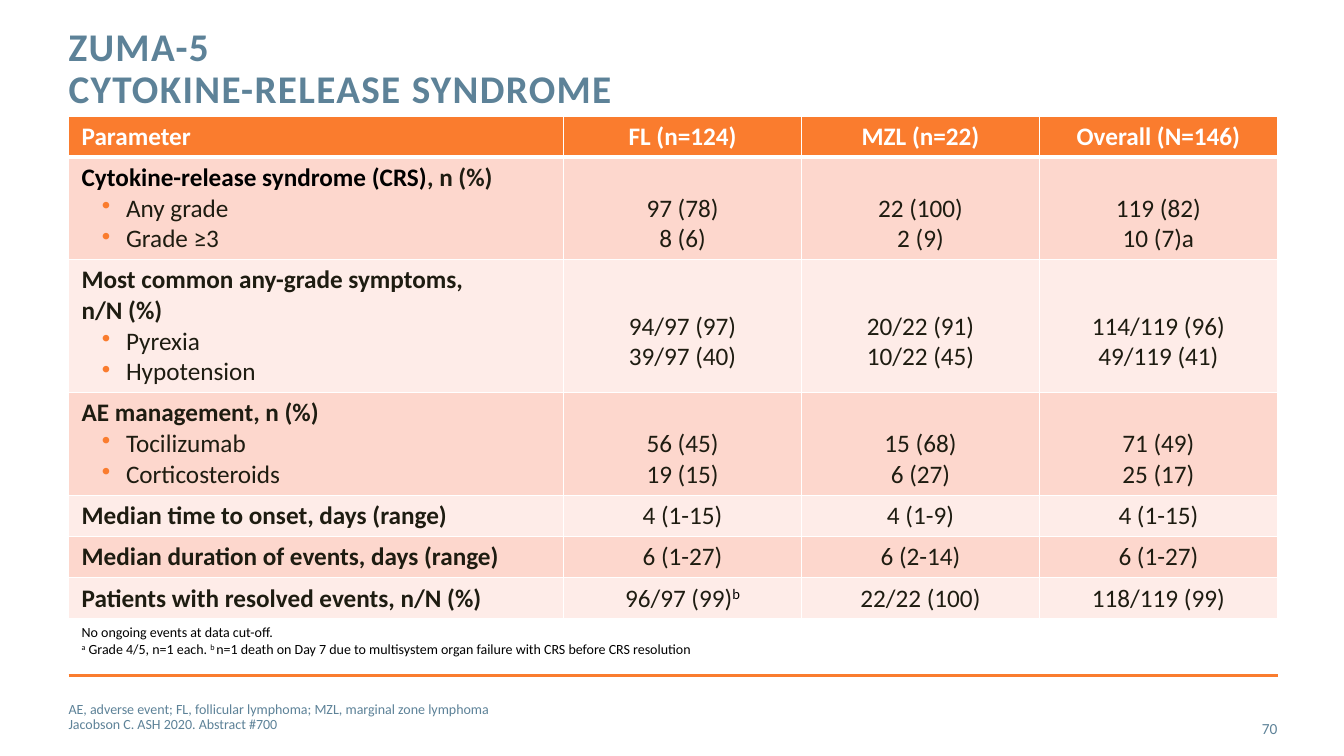
from dataclasses import dataclass

from lxml import etree
from pptx import Presentation
from pptx import util as u
from pptx.dml.color import RGBColor
from pptx.enum import shapes, text
from pptx.oxml import ns

ORANGE, BLUE, DARK, BLACK, WHITE = "FA7C2E", "5D8298", "1E1C11", "000000", "FFFFFF"
BANDS = ("FDD7CD", "FEECE8")
LEFT, CENTER, RIGHT = text.PP_ALIGN.LEFT, text.PP_ALIGN.CENTER, text.PP_ALIGN.RIGHT
TOP, MIDDLE, BOTTOM = text.MSO_ANCHOR.TOP, text.MSO_ANCHOR.MIDDLE, text.MSO_ANCHOR.BOTTOM


@dataclass(frozen=True)
class Span:
    words: str
    color: str = ""
    raised: bool = False


@dataclass(frozen=True)
class Look:
    size: float
    color: str
    bold: bool = False
    align: text.PP_ALIGN = LEFT
    tracking: float = 0


@dataclass(frozen=True)
class Row:
    height: float
    label: tuple[Span, ...]
    values: tuple[tuple[Span, ...], ...]
    items: tuple[str, ...] = ()
    bottom: float = 0.05


@dataclass(frozen=True)
class Label:
    left: float
    top: float
    width: float
    height: float
    words: str
    look: Look
    anchor: text.MSO_ANCHOR = MIDDLE
    spacing: float | u.Length = 1.0


HEADING = Look(18, WHITE, True)
HEADING_MID = Look(18, WHITE, True, CENTER)
ROW_LABEL = Look(18, DARK, True)
ITEM = Look(18, DARK)
VALUE = Look(18, DARK, align=CENTER)
NOTE = Look(10, BLACK)


def plain(*lines: str) -> tuple[tuple[Span, ...], ...]:
    return tuple((Span(line),) for line in lines)


HEADERS = ("Parameter", "FL (n=124)", "MZL (n=22)", "Overall (N=146)")
ROWS = (
    Row(1.01, (Span("Cytokine-release syndrome (CRS)", BLACK), Span(", n (%)")),
        plain("97 (78)\n8 (6)", "22 (100)\n2 (9)", "119 (82)\n10 (7)a"),
        ("Any grade", "Grade ≥3")),
    Row(1.32, (Span("Most common any-grade symptoms,\nn/N (%)"),),
        plain("94/97 (97)\n39/97 (40)", "20/22 (91)\n10/22 (45)", "114/119 (96)\n49/119 (41)"),
        ("Pyrexia", "Hypotension"), 0.2),
    Row(1.01, (Span("AE management, n (%)"),),
        plain("56 (45)\n19 (15)", "15 (68)\n6 (27)", "71 (49)\n25 (17)"),
        ("Tocilizumab", "Corticosteroids")),
    Row(0.41, (Span("Median time to onset, days (range)"),),
        plain("4 (1-15)", "4 (1-9)", "4 (1-15)")),
    Row(0.41, (Span("Median duration of events, days (range)"),),
        plain("6 (1-27)", "6 (2-14)", "6 (1-27)")),
    Row(0.41, (Span("Patients with resolved events, n/N (%)"),),
        ((Span("96/97 (99)"), Span("b", BLACK, True)), *plain("22/22 (100)", "118/119 (99)"))),
)
FOOTNOTE = (
    Span("No ongoing events at data cut-off.\n"),
    Span("a", raised=True),
    Span(" Grade 4/5, n=1 each. "),
    Span("b ", raised=True),
    Span("n=1 death on Day 7 due to multisystem organ failure with CRS before CRS resolution"),
)
LABELS = (
    Label(0.68, 0.27, 9.56, 0.88, "ZUMA-5\nCYTOKINE-RELEASE SYNDROME",
          Look(28, BLUE, True, tracking=1), TOP, u.Pt(30)),
    Label(0.68, 6.92, 8.88, 0.4,
          "AE, adverse event; FL, follicular lymphoma; MZL, marginal zone lymphoma\n"
          "Jacobson C. ASH 2020. Abstract #700", Look(10, BLUE), spacing=0.9),
    Label(11.81, 7.03, 0.86, 0.4, "70", Look(11, BLUE, align=RIGHT)),
)


def rgb(color: str) -> RGBColor:
    return RGBColor.from_string(color)


def add_node(parent, tag: str, **attributes: str):
    return etree.SubElement(parent, ns.qn(tag), attributes)


def write(para, spans: tuple[Span, ...], look: Look) -> None:
    para.alignment = look.align
    para.font.name, para.font.size = "Calibri", u.Pt(look.size)
    para.font.bold, para.font.color.rgb = look.bold, rgb(look.color)
    for span in spans:
        for number, line in enumerate(span.words.split("\n")):
            if number:
                para.add_line_break()
            if not line:
                continue
            run = para.add_run()
            run.text = line
            properties = run._r.get_or_add_rPr()
            if span.color:
                run.font.color.rgb = rgb(span.color)
            if span.raised:
                properties.set("baseline", "30000")
            if look.tracking:
                properties.set("spc", str(int(look.tracking * 100)))


def add_bullet(para) -> None:
    properties = para._p.get_or_add_pPr()
    properties.set("marL", str(u.Inches(0.44)))
    properties.set("indent", str(u.Inches(-0.24)))
    add_node(add_node(properties, "a:buClr"), "a:srgbClr", val=ORANGE)
    add_node(properties, "a:buChar", char="•")


def style_cell(cell, fill: str = "", top: float = 1, bottom: float = 1) -> None:
    cell.vertical_anchor = MIDDLE
    cell.margin_left = cell.margin_right = u.Inches(0.13)
    cell.margin_top = cell.margin_bottom = u.Inches(0.05)
    properties = cell._tc.get_or_add_tcPr()
    for side, points in (("L", 1), ("R", 1), ("T", top), ("B", bottom)):
        border = add_node(properties, f"a:ln{side}", w=str(u.Pt(points)))
        add_node(add_node(border, "a:solidFill"), "a:srgbClr", val=WHITE)
    if fill:
        cell.fill.solid()
        cell.fill.fore_color.rgb = rgb(fill)
    else:
        cell.fill.background()


def add_label(page, label: Label) -> None:
    place = (u.Inches(n) for n in (label.left, label.top, label.width, label.height))
    frame = page.shapes.add_textbox(*place).text_frame
    frame.word_wrap = True
    frame.vertical_anchor = label.anchor
    frame.margin_left = frame.margin_right = frame.margin_top = frame.margin_bottom = 0
    frame.paragraphs[0].line_spacing = label.spacing
    write(frame.paragraphs[0], (Span(label.words),), label.look)


def add_results(page) -> None:
    heights = (0.41, *(row.height for row in ROWS), 0.41)
    table = page.shapes.add_table(len(heights), len(HEADERS), u.Inches(0.68), u.Inches(1.15),
                                  u.Inches(11.99), u.Inches(sum(heights))).table
    table.first_row = table.horz_banding = False
    for column, width in zip(table.columns, (4.91, 2.36, 2.36, 2.36)):
        column.width = u.Inches(width)
    for line, height in zip(table.rows, heights):
        line.height = u.Inches(height)
    for column, words in enumerate(HEADERS):
        cell = table.cell(0, column)
        style_cell(cell, ORANGE, bottom=3)
        write(cell.text_frame.paragraphs[0], (Span(words),), HEADING_MID if column else HEADING)
    for index, row in enumerate(ROWS):
        for column, spans in enumerate((row.label, *row.values)):
            cell = table.cell(index + 1, column)
            style_cell(cell, BANDS[index % 2], top=1 if index else 3)
            write(cell.text_frame.paragraphs[0], spans, VALUE if column else ROW_LABEL)
            if column and row.items:
                cell.vertical_anchor = BOTTOM
                cell.margin_bottom = u.Inches(row.bottom)
        for item in row.items:
            para = table.cell(index + 1, 0).text_frame.add_paragraph()
            add_bullet(para)
            write(para, (Span(item),), ITEM)
    last = len(heights) - 1
    note = table.cell(last, 0)
    note.merge(table.cell(last, len(HEADERS) - 1))
    style_cell(note)
    write(note.text_frame.paragraphs[0], FOOTNOTE, NOTE)


def main() -> None:
    deck = Presentation()
    deck.slide_width, deck.slide_height = u.Inches(13.33), u.Inches(7.5)
    page = deck.slides.add_slide(deck.slide_layouts[6])
    rule = page.shapes.add_connector(shapes.MSO_CONNECTOR.STRAIGHT, u.Inches(0.68), u.Inches(6.7),
                                     u.Inches(12.68), u.Inches(6.7))
    rule.line.color.rgb, rule.line.width = rgb(ORANGE), u.Pt(2)
    add_node(rule._element.spPr, "a:effectLst")
    add_results(page)
    for label in LABELS:
        add_label(page, label)
    deck.save("out.pptx")


if __name__ == "__main__":
    main()
